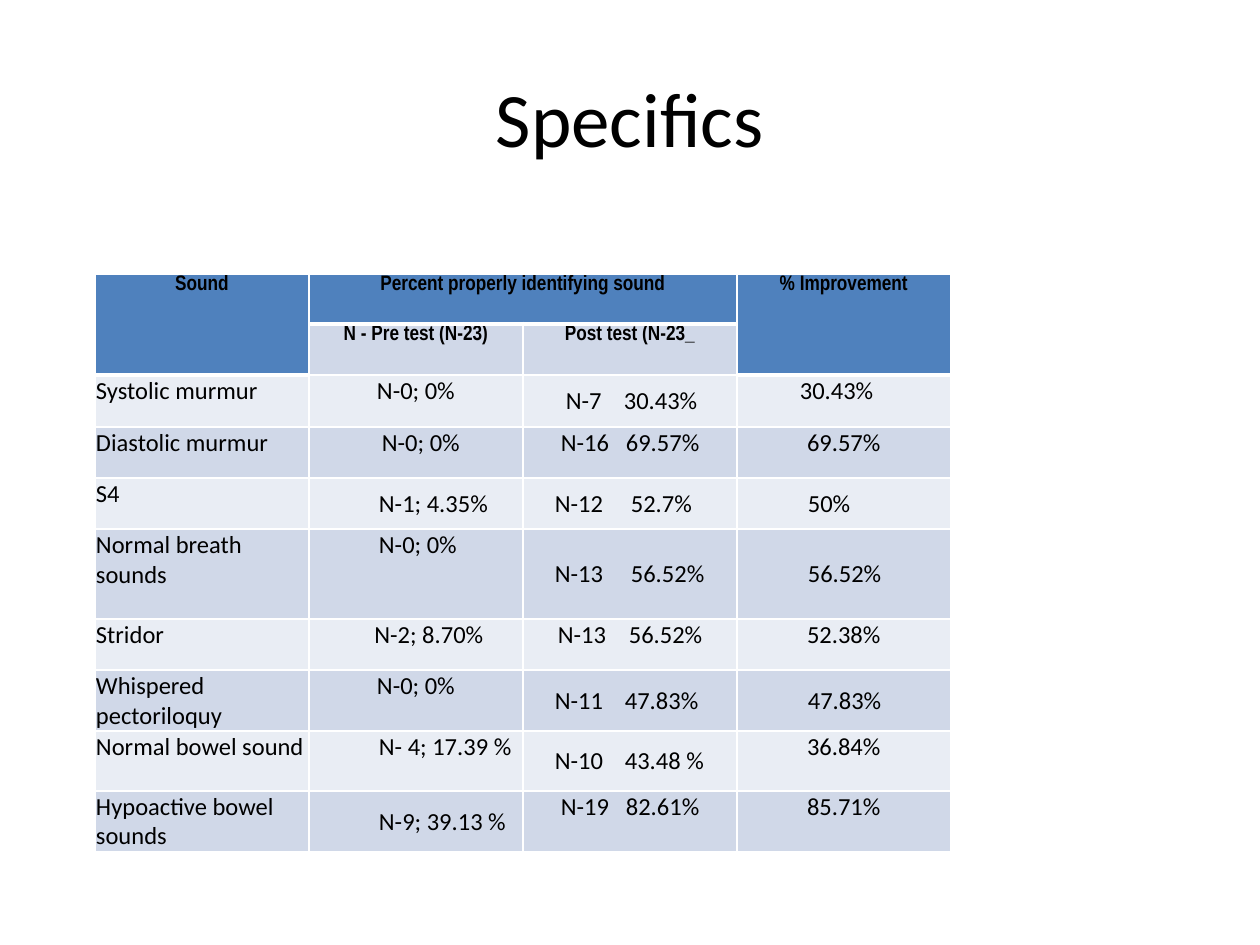
import pptx
import pptx.util
import pptx.enum.text
import pptx.dml.color
import pptx.oxml.ns
import lxml.etree

SCALE = 914400 / 126
ALIGN = pptx.enum.text.PP_ALIGN
ANCHOR = pptx.enum.text.MSO_ANCHOR
LEFT, CENTER = ALIGN.LEFT, ALIGN.CENTER
TOP, MIDDLE = ANCHOR.TOP, ANCHOR.MIDDLE
THEME = {
    "ink": "000000", "border": "FFFFFF", "head": "4F81BD",
    "bands": ["E9EDF4", "D0D8E8"],
    "title": {"name": "Calibri", "size": pptx.util.Pt(44), "bold": False},
    "header": {"name": "Arial Narrow", "size": pptx.util.Pt(12), "bold": True},
    "body": {"name": "Calibri", "size": pptx.util.Pt(14), "bold": False},
}


def px(length):
    return pptx.util.Emu(round(length * SCALE))


def write(para, text, style):
    span = para.add_run()
    span.text = text
    for name, value in THEME[style].items():
        setattr(span.font, name, value)
    span.font.color.rgb = pptx.dml.color.RGBColor.from_string(THEME["ink"])


deck = pptx.Presentation()
deck.slide_width, deck.slide_height = px(1260), px(945)
page = deck.slides.add_slide(deck.slide_layouts[5])

title = page.shapes.title
title.left, title.top, title.width, title.height = px(63), px(38), px(1134), px(158)
title.text_frame.vertical_anchor = MIDDLE
title.text_frame.paragraphs[0].alignment = CENTER
write(title.text_frame.paragraphs[0], "Specifics", "title")

headers = {
    (0, 0): "Sound",
    (0, 1): "Percent properly identifying sound",
    (0, 3): "% Improvement",
    (1, 1): "N - Pre test (N-23)",
    (1, 2): "Post test (N-23_",
}
sounds = ["Systolic murmur", "Diastolic murmur", "S4", "Normal breath sounds",
          "Stridor", "Whispered pectoriloquy", "Normal bowel sound",
          "Hypoactive bowel sounds"]
pre_tests = [
    ("N-0; 0%", CENTER, 1, TOP), ("N-0; 0%", CENTER, 11, TOP),
    ("N-1; 4.35%", LEFT, 70, MIDDLE), ("N-0; 0%", CENTER, 5, TOP),
    ("N-2; 8.70%", CENTER, 27, TOP), ("N-0; 0%", CENTER, 1, TOP),
    ("N- 4; 17.39 %", LEFT, 70, TOP), ("N-9; 39.13 %", LEFT, 70, MIDDLE),
]
post_tests = [
    ("N-7\t30.43%", LEFT, 43, MIDDLE, 58), ("N-16\t69.57%", LEFT, 38, TOP, 65),
    ("N-12\t52.7%", LEFT, 32, MIDDLE, 76), ("N-13\t56.52%", LEFT, 32, MIDDLE, 76),
    ("N-13\t56.52%", LEFT, 35, TOP, 71), ("N-11\t47.83%", LEFT, 32, MIDDLE, 70),
    ("N-10\t43.48 %", LEFT, 32, MIDDLE, 70), ("N-19\t82.61%", LEFT, 38, TOP, 65),
]
improvements = [
    ("30.43%", LEFT, 63, TOP), ("69.57%", CENTER, 1, TOP),
    ("50%", LEFT, 71, MIDDLE), ("56.52%", LEFT, 71, MIDDLE),
    ("52.38%", CENTER, 1, TOP), ("47.83%", LEFT, 71, MIDDLE),
    ("36.84%", CENTER, 1, TOP), ("85.71%", CENTER, 1, TOP),
]
entries = {place: (text, CENTER, 1, TOP) for place, text in headers.items()}
for row, sound in enumerate(sounds):
    values = (sound, LEFT, 1, TOP), pre_tests[row], post_tests[row], improvements[row]
    for column, value in enumerate(values):
        entries[row + 2, column] = value

heights = [50, 51, 52, 51, 51, 90, 51, 61, 60, 60]
table = page.shapes.add_table(
    len(heights), 4, px(95), px(274), px(856), px(sum(heights))).table
for column in table.columns:
    column.width = px(214)
for row, height in zip(table.rows, heights):
    row.height = px(height)

for row in range(len(heights)):
    for column in range(4):
        cell = table.cell(row, column)
        header_end = 1 if column in (1, 2) else 2
        heavy = {"T": row == header_end, "B": row == 0 or row + 1 == header_end}
        for side in "LRTB":
            line = lxml.etree.SubElement(
                cell._tc.get_or_add_tcPr(), pptx.oxml.ns.qn("a:ln" + side),
                w=str(pptx.util.Pt(3 if heavy.get(side) else 1)))
            fill = lxml.etree.SubElement(line, pptx.oxml.ns.qn("a:solidFill"))
            lxml.etree.SubElement(
                fill, pptx.oxml.ns.qn("a:srgbClr"), val=THEME["border"])
        color = THEME["head"] if row < header_end else THEME["bands"][row % 2]
        cell.fill.solid()
        cell.fill.fore_color.rgb = pptx.dml.color.RGBColor.from_string(color)
        if (row, column) not in entries:
            continue
        text, alignment, indent, anchor, *gap = entries[row, column]
        layout = {"margin_left": px(indent), "margin_right": px(1),
                  "margin_top": px(1), "margin_bottom": 0,
                  "vertical_anchor": anchor}
        for name, value in layout.items():
            setattr(cell, name, value)
        para = cell.text_frame.paragraphs[0]
        para.alignment = alignment
        for stop in gap:
            tabs = lxml.etree.SubElement(
                para._p.get_or_add_pPr(), pptx.oxml.ns.qn("a:tabLst"))
            lxml.etree.SubElement(
                tabs, pptx.oxml.ns.qn("a:tab"), pos=str(px(stop)), algn="l")
        write(para, text, "header" if row < 2 else "body")

for start, end in [((0, 0), (1, 0)), ((0, 1), (0, 2)), ((0, 3), (1, 3))]:
    table.cell(*start).merge(table.cell(*end))

deck.save("out.pptx")
